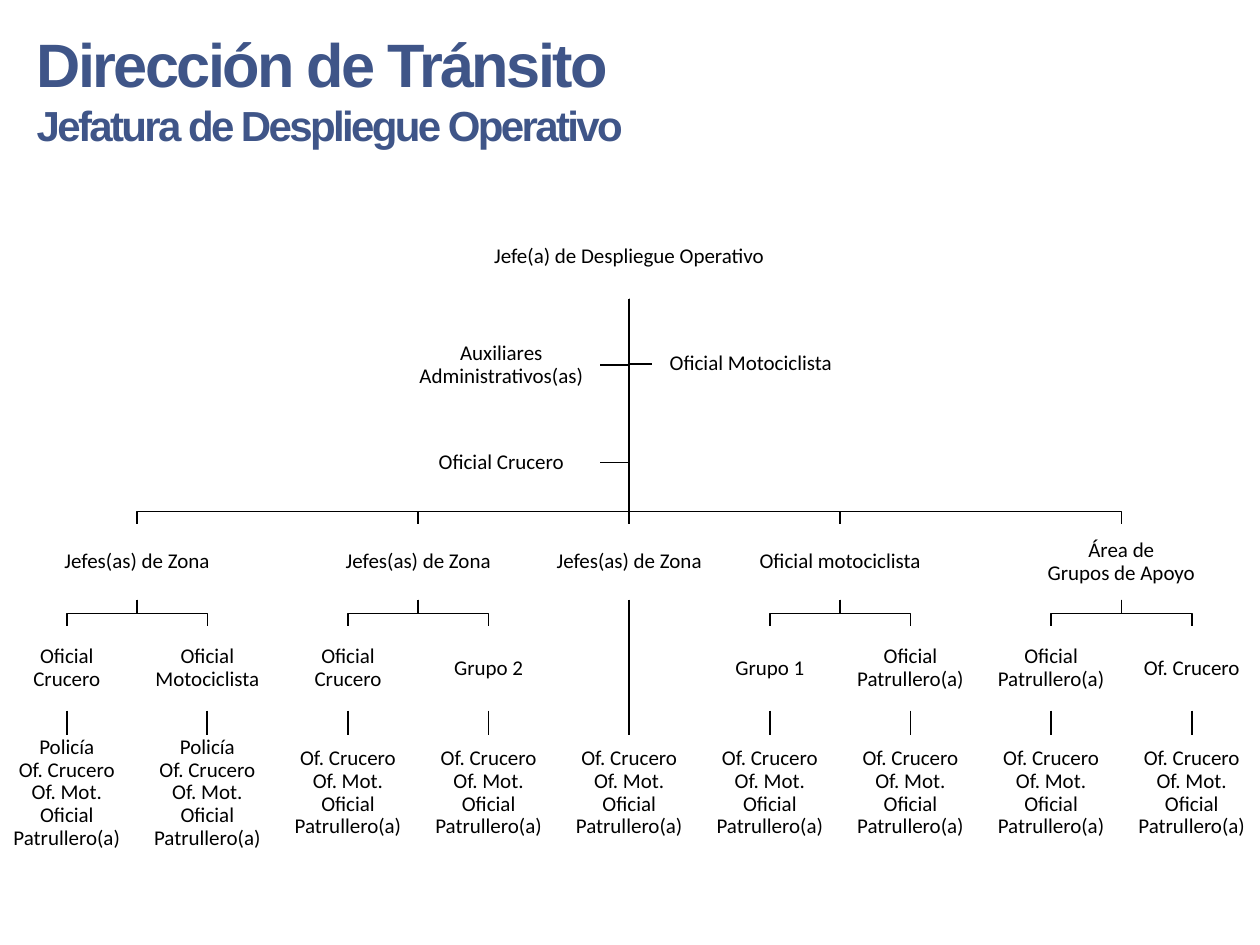
import pptx
import pptx.util
import pptx.dml.color
import pptx.enum.shapes
import pptx.enum.text
from lxml import etree

# Content
TITLE = ["Dirección de Tránsito", "Jefatura de Despliegue Operativo"]
CHIEF = "Jefe(a) de Despliegue Operativo"
AIDES = [  # text, side of the trunk, top
    ("Auxiliares Administrativos(as)", "left", 2.64),
    ("Oficial Motociclista", "right", 2.63),
    ("Oficial Crucero", "left", 3.41),
]
CREW = "Of. Crucero\nOf. Mot.\nOficial Patrullero(a)"
POLICE_CREW = "Policía\n" + CREW
# Each area: name, then its (unit, crew) columns; None means no unit
AREAS = [
    ("Jefes(as) de Zona", [("Oficial\nCrucero", POLICE_CREW),
                           ("Oficial\nMotociclista", POLICE_CREW)]),
    ("Jefes(as) de Zona", [("Oficial\nCrucero", CREW), ("Grupo 2", CREW)]),
    ("Jefes(as) de Zona", [(None, CREW)]),
    ("Oficial motociclista", [("Grupo 1", CREW),
                              ("Oficial\nPatrullero(a)", CREW)]),
    ("Área de\nGrupos de Apoyo", [("Oficial\nPatrullero(a)", CREW),
                                  ("Of. Crucero", CREW)]),
]

# Theme and grid, in inches and points
THEME = {
    "title": pptx.dml.color.RGBColor(0x3F, 0x55, 0x88),
    "ink": pptx.dml.color.RGBColor(0, 0, 0),
    "paper": pptx.dml.color.RGBColor(255, 255, 255),
    "title_font": "Arial", "title_sizes": (35, 24), "tracking": -150,
    "font": "Calibri", "size": 12, "line": 1,
}
SIZES = {"chief": (2.57, 0.67), "aide": (1.57, 0.52), "area": (1.38, 0.6),
         "unit": (0.91, 0.67), "crew": (0.91, 0.93)}
TOPS = {"chief": 1.7, "area": 4.16, "unit": 4.97, "crew": 5.83}
FIRST_X, PITCH = 0.53, 1.116  # column centres
TRUNK_X = FIRST_X + 4 * PITCH
AIDE_GAP = {"left": 0.23, "right": 0.18}
BEND = 0.1  # height of the bend above the lower box

inch = pptx.util.Inches


def add_box(s, kind, text, center, top=None):
    w, h = SIZES[kind]
    top = TOPS[kind] if top is None else top
    sp = s.shapes.add_shape(pptx.enum.shapes.MSO_SHAPE.RECTANGLE,
                            inch(center - w / 2), inch(top), inch(w), inch(h))
    sp.shadow.inherit = False
    sp.fill.solid()
    sp.fill.fore_color.rgb = THEME["paper"]
    sp.line.fill.background()
    tf = sp.text_frame
    tf.text = text
    tf.word_wrap = True
    tf.vertical_anchor = pptx.enum.text.MSO_ANCHOR.MIDDLE
    tf.margin_left = tf.margin_right = tf.margin_top = tf.margin_bottom = inch(0.01)
    for p in tf.paragraphs:
        p.alignment = pptx.enum.text.PP_ALIGN.CENTER
        p.line_spacing = 0.9
        for r in p.runs:
            r.font.name = THEME["font"]
            r.font.size = pptx.util.Pt(THEME["size"])
            r.font.color.rgb = THEME["ink"]
    return sp


def style_line(line):
    line.color.rgb = THEME["ink"]
    line.width = pptx.util.Pt(THEME["line"])


def add_bent(s, points):
    builder = s.shapes.build_freeform(*points[0], scale=1.0)
    builder.add_line_segments(points[1:], close=False)
    sp = builder.convert_to_shape()
    sp.shadow.inherit = False
    sp.fill.background()
    style_line(sp.line)


def bottom_of(sp):
    return sp.left + sp.width // 2, sp.top + sp.height


def add_link(s, upper, lower):
    """Straight joined line when the boxes align, otherwise a bent line."""
    x1, y1 = bottom_of(upper)
    x2, y2 = lower.left + lower.width // 2, lower.top
    if abs(x1 - x2) < inch(0.01):
        c = s.shapes.add_connector(pptx.enum.shapes.MSO_CONNECTOR.STRAIGHT,
                                   x1, y1, x2, y2)
        c.begin_connect(upper, 2)
        c.end_connect(lower, 0)
        etree.SubElement(c._element.spPr, pptx.oxml.ns.qn("a:effectLst"))
        style_line(c.line)
    else:
        bend = y2 - inch(BEND)
        add_bent(s, [(x1, y1), (x1, bend), (x2, bend), (x2, y2)])


def add_title(s):
    sp = s.shapes.title
    sp.left, sp.top, sp.width, sp.height = map(inch, (0.19, 0.16, 7.46, 1.09))
    tf = sp.text_frame
    tf.text = "\n".join(TITLE)
    tf.word_wrap = True
    tf.auto_size = pptx.enum.text.MSO_AUTO_SIZE.NONE
    tf.vertical_anchor = pptx.enum.text.MSO_ANCHOR.TOP
    for p, size in zip(tf.paragraphs, THEME["title_sizes"]):
        p.alignment = pptx.enum.text.PP_ALIGN.LEFT
        for r in p.runs:
            r.font.name = THEME["title_font"]
            r.font.size = pptx.util.Pt(size)
            r.font.bold = True
            r.font.color.rgb = THEME["title"]
            r.font._element.set("spc", str(THEME["tracking"]))


def add_aides(s, chief):
    for text, side, top in AIDES:
        sign = -1 if side == "left" else 1
        offset = AIDE_GAP[side] + SIZES["aide"][0] / 2
        sp = add_box(s, "aide", text, TRUNK_X + sign * offset, top)
        x, y = bottom_of(chief)
        mid = sp.top + sp.height // 2
        edge = sp.left + sp.width if side == "left" else sp.left
        add_bent(s, [(x, y), (x, mid), (edge, mid)])


def add_areas(s, chief):
    column = 0
    for name, members in AREAS:
        centers = [FIRST_X + PITCH * (column + i) for i in range(len(members))]
        area = add_box(s, "area", name, sum(centers) / len(centers))
        add_link(s, chief, area)
        for center, (unit, crew) in zip(centers, members):
            parent = area
            if unit:
                parent = add_box(s, "unit", unit, center)
                add_link(s, area, parent)
            add_link(s, parent, add_box(s, "crew", crew, center))
        column += len(members)


def main():
    prs = pptx.Presentation()
    prs.slide_width, prs.slide_height = inch(10), inch(7.5)
    s = prs.slides.add_slide(prs.slide_layouts[5])
    add_title(s)
    chief = add_box(s, "chief", CHIEF, TRUNK_X)
    add_aides(s, chief)
    add_areas(s, chief)
    prs.save("out.pptx")


if __name__ == "__main__":
    main()
